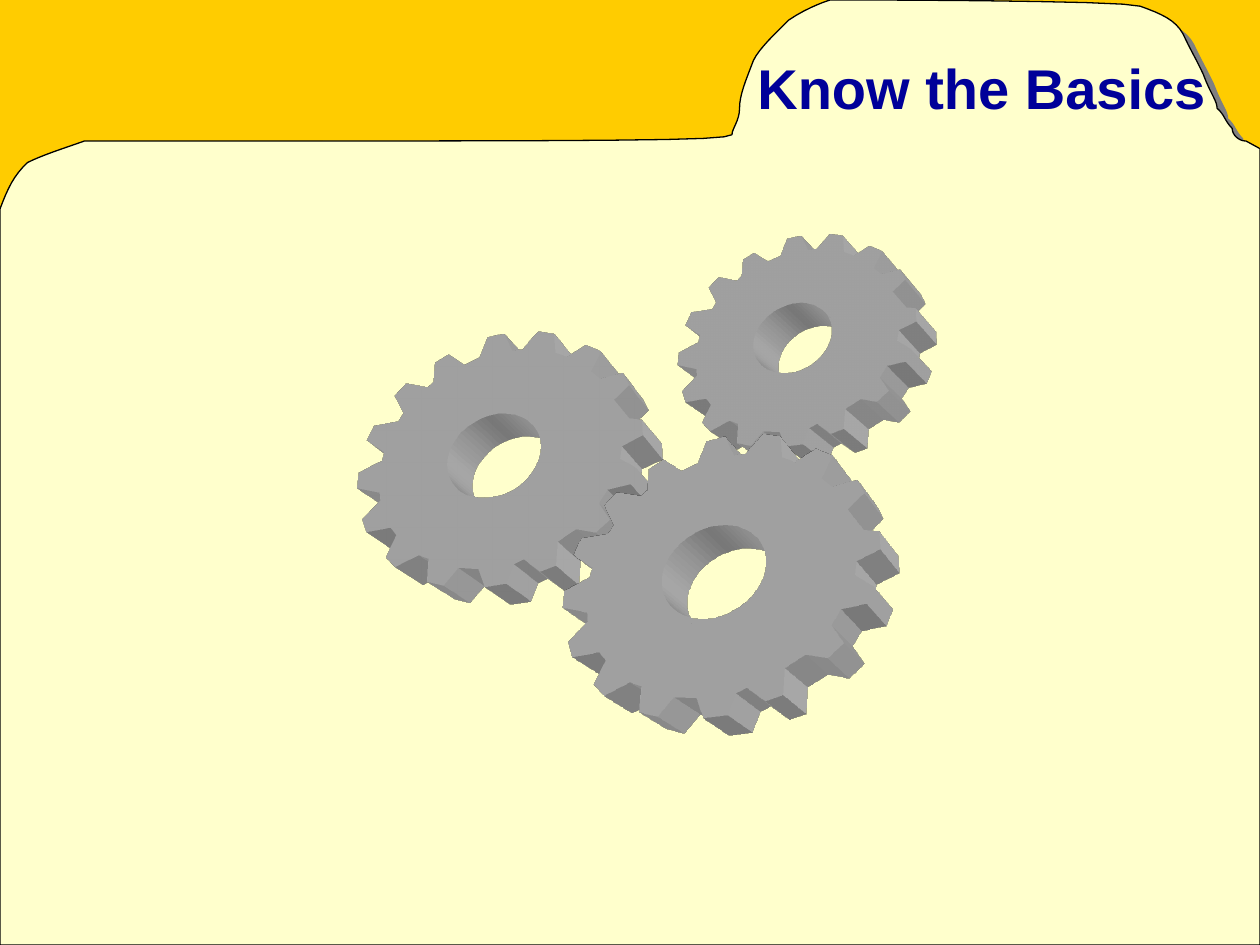
import pptx
import pptx.dml.color
import pptx.enum.text
import pptx.util
from lxml import etree

Pt = pptx.util.Pt
RGBColor = pptx.dml.color.RGBColor

AMBER = RGBColor(0xFF, 0xCC, 0x00)
CREAM = RGBColor(0xFF, 0xFF, 0xCC)
SILVER = RGBColor(0xC0, 0xC0, 0xC0)
BLACK = RGBColor(0, 0, 0)
NAVY = RGBColor(0, 0, 0x99)
NS = "http://schemas.openxmlformats.org/drawingml/2006/main"
UNIT = 0.72  # outlines are listed in hundredths of an inch

# Folder outline: pairs are corners, sextets are Bezier curves
FOLDER = [
    (84, 112),
    (492, 112, 575, 112, 581, 107), (581, 102, 587, 96, 587, 86),
    (587, 75, 592, 64, 598, 48), (603, 38, 615, 27, 626, 16),
    (642, 5, 659, 0, 659, 0), (659, 0, 894, 0, 905, 5),
    (922, 11, 933, 16, 939, 27), (944, 38, 950, 48, 955, 59),
    (961, 75, 966, 80, 966, 86), (972, 91, 972, 96, 978, 102),
    (978, 107, 983, 112, 989, 112),
    (1000, 118), (1000, 750), (0, 750), (0, 166),
    (6, 150, 11, 139, 22, 129), (34, 123, 50, 118, 67, 112),
]

# Gear teeth, drawn in a frame of GEAR_W by GEAR_H
GEAR_W, GEAR_H = 276, 242
TEETH = [
    (124, 19), (132, 0), (149, 0), (157, 20), (167, 21), (183, 6), (198, 12), (199, 32),
    (210, 39), (228, 31), (242, 41), (232, 59), (240, 68), (261, 67), (266, 80), (252, 91),
    (257, 109), (276, 115), (276, 130), (257, 136), (255, 147), (269, 159), (263, 172),
    (243, 173), (235, 184), (244, 200), (231, 210), (214, 204), (197, 212), (195, 233),
    (181, 236), (166, 223), (157, 226), (150, 242), (130, 242), (124, 225), (105, 221),
    (91, 235), (75, 229), (76, 208), (66, 203), (43, 211), (33, 200), (43, 181), (37, 173),
    (12, 173), (7, 159), (25, 144), (24, 136), (0, 127), (1, 112), (25, 104), (27, 96),
    (8, 80), (15, 66), (41, 67), (46, 60), (36, 39), (48, 29), (71, 38), (77, 34), (78, 14),
    (92, 8), (109, 23),
]
HOLE_R = 0.165  # share of the gear's width and height
HOLE_STEPS = 64

# Left, top, width, height of each gear
GEARS = [(525, 177, 207, 182), (267, 252, 248, 218), (428, 332, 276, 242)]

SHADOW = f"""<a:effectLst xmlns:a="{NS}">
  <a:outerShdw dist="107950" dir="2700000" algn="ctr" rotWithShape="0">
    <a:srgbClr val="808080"/></a:outerShdw></a:effectLst>"""
SCENE = f"""<a:scene3d xmlns:a="{NS}">
  <a:camera prst="legacyPerspectiveFront"><a:rot lat="20099999" lon="1500000" rev="0"/></a:camera>
  <a:lightRig rig="legacyFlat3" dir="t"/></a:scene3d>"""
EXTRUSION = f"""<a:sp3d xmlns:a="{NS}" extrusionH="430200" prstMaterial="legacyMatte">
  <a:bevelT w="13500" h="13500" prst="angle"/><a:bevelB w="13500" h="13500" prst="angle"/>
  <a:extrusionClr><a:srgbClr val="{SILVER}"/></a:extrusionClr></a:sp3d>"""


def flatten(segments, steps=8):
    """Turn corners and Bezier curves into a list of points."""
    points = []
    for seg in segments:
        if len(seg) == 2:
            points.append(seg)
            continue
        ctrl = [points[-1], seg[:2], seg[2:4], seg[4:]]
        for i in range(1, steps + 1):
            t = i / steps
            weights = ((1 - t) ** 3, 3 * t * (1 - t) ** 2, 3 * t * t * (1 - t), t ** 3)
            points.append(tuple(sum(w * c[axis] for w, c in zip(weights, ctrl))
                                for axis in (0, 1)))
    return points


def ellipse(cx, cy, rx, ry):
    angles = [2 * math.pi * i / HOLE_STEPS for i in range(HOLE_STEPS)]
    return [(cx + rx * math.cos(a), cy + ry * math.sin(a)) for a in angles]


class Deck:
    font = "Arial"

    def __init__(self, prs):
        self.s = prs.slides.add_slide(prs.slide_layouts[5])

    def background(self, color):
        fill = self.s.background.fill
        fill.solid()
        fill.fore_color.rgb = color

    def outline(self, shapes, contours, color, line=None):
        scaled = [[(Pt(x * UNIT), Pt(y * UNIT)) for x, y in c] for c in contours]
        builder = shapes.build_freeform(*scaled[0][0], scale=1.0)
        for i, points in enumerate(scaled):
            if i:
                builder.move_to(*points[0])
            builder.add_line_segments(points[1:], close=True)
        sp = builder.convert_to_shape()
        sp.shadow.inherit = False
        sp.fill.solid()
        sp.fill.fore_color.rgb = color
        if line is None:
            sp.line.fill.background()
        else:
            sp.line.color.rgb = line
            sp.line.width = Pt(0.75)
        return sp

    def folder(self):
        sp = self.outline(self.s.shapes, [flatten(FOLDER)], CREAM, BLACK)
        props = sp._element.spPr
        props.replace(props.find(f"{{{NS}}}effectLst"), etree.fromstring(SHADOW))

    def gear(self, shapes, left, top, width, height):
        teeth = [(left + x * width / GEAR_W, top + y * height / GEAR_H) for x, y in TEETH]
        hole = ellipse(left + width / 2, top + height / 2, width * HOLE_R, height * HOLE_R)
        sp = self.outline(shapes, [teeth, hole], SILVER)
        for xml in (SCENE, EXTRUSION):
            sp._element.spPr.append(etree.fromstring(xml))

    def title(self, text, left, top, width, height):
        sp = self.s.shapes.title
        sp.left, sp.top, sp.width, sp.height = Pt(left), Pt(top), Pt(width), Pt(height)
        tf = sp.text_frame
        tf.vertical_anchor = pptx.enum.text.MSO_ANCHOR.MIDDLE
        p = tf.paragraphs[0]
        p.alignment = pptx.enum.text.PP_ALIGN.CENTER
        r = p.add_run()
        r.text = text
        r.font.name, r.font.size, r.font.bold = self.font, Pt(32), True
        r.font.color.rgb = NAVY
        self.s.shapes._spTree.append(sp._element)  # bring to front


def main():
    prs = pptx.Presentation()
    prs.slide_width, prs.slide_height = Pt(720), Pt(540)
    deck = Deck(prs)

    # Folder on an amber ground
    deck.background(AMBER)
    deck.folder()

    # Three meshing gears
    group = deck.s.shapes.add_group_shape()
    for box in GEARS:
        deck.gear(group.shapes, *box)

    # Title on the folder tab
    deck.title("Know the Basics", 384, 18, 354, 63)
    prs.save("out.pptx")


import math

if __name__ == "__main__":
    main()
